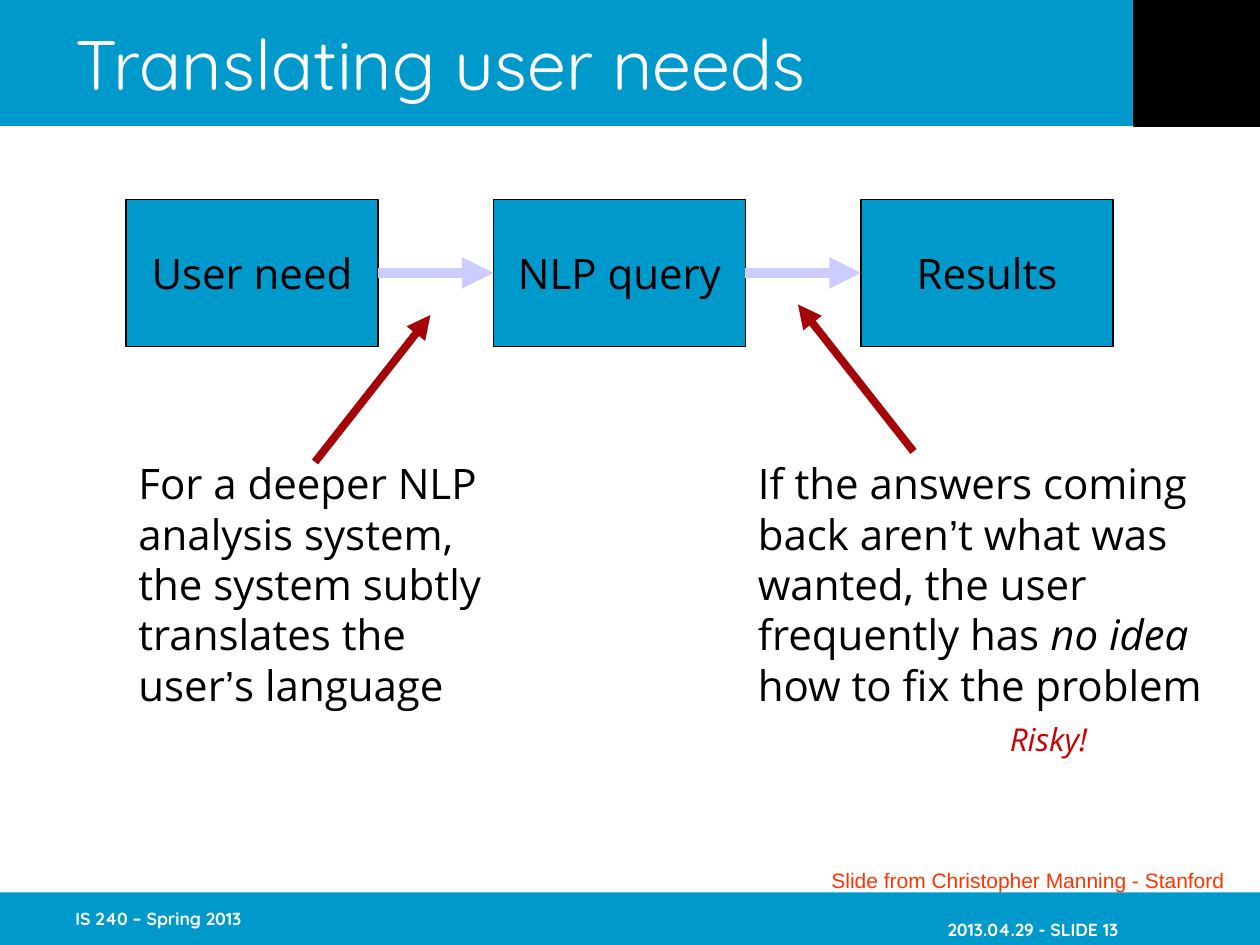
from lxml import etree
from pptx import Presentation
from pptx.dml.color import RGBColor
from pptx.enum.shapes import MSO_CONNECTOR, MSO_SHAPE
from pptx.enum.text import MSO_ANCHOR, PP_ALIGN
from pptx.oxml.ns import qn
from pptx.util import Pt

LEFT, MID, RIGHT = PP_ALIGN.LEFT, PP_ALIGN.CENTER, PP_ALIGN.RIGHT
TOP, CENTER = MSO_ANCHOR.TOP, MSO_ANCHOR.MIDDLE
RECT, LINE = MSO_SHAPE.RECTANGLE, MSO_CONNECTOR.STRAIGHT

COLORS = {"blue": "0099CC", "black": "000000", "white": "FFFFFF",
          "pale": "CCCCFF", "dark": "A40508", "red": "CC0000",
          "orange": "FF3300"}
HEAD, BODY, PLAIN = "Quicksand", "Open Sans", "Arial"

TITLE = "Translating user needs"
STEPS = ["User need", "NLP query", "Results"]
# A paragraph is a string or a list of (text, changes) runs.
CAUSE = ["For a deeper NLP", "analysis system,", "the system subtly",
         "translates the",
         [("user", {}), ("’", {"font": PLAIN}), ("s language", {})]]
EFFECT = ["If the answers coming",
          [("back aren", {}), ("’", {"font": PLAIN}), ("t what was", {})],
          "wanted, the user",
          [("frequently has ", {}), ("no idea", {"italic": True})],
          "how to fix the problem",
          [("Risky!", {"size": 18, "color": "red", "italic": True})]]
BANDS = [(0, 0, 720, 72, "blue", None),
         (0, 510, 720, 30, "blue", None),
         (648, 0, 72, 72, "black", "black")]
HINTS = [((180, 264), (246, 180)), ((522, 258), (456, 174))]

STEP_X, STEP_Y, STEP_W, STEP_H, PITCH = 72, 114, 144, 84, 210


def paint(color):
    return RGBColor.from_string(COLORS[color])


def write(shape, paras, font=BODY, size=24, color="black", bold=False,
          italic=False, align=LEFT, anchor=TOP, inset=7.2, wrap=True):
    frame = shape.text_frame
    frame.word_wrap = wrap
    frame.vertical_anchor = anchor
    frame.margin_left = frame.margin_right = Pt(inset)
    frame.margin_top = frame.margin_bottom = Pt(3.6)
    base = dict(font=font, size=size, color=color, italic=italic)
    for i, runs in enumerate(paras):
        para = frame.add_paragraph() if i else frame.paragraphs[0]
        para.alignment = align
        for text, change in [(runs, {})] if isinstance(runs, str) else runs:
            look = {**base, **change}
            run = para.add_run()
            run.text = text
            run.font.name = look["font"]
            run.font.size = Pt(look["size"])
            run.font.color.rgb = paint(look["color"])
            run.font.italic = look["italic"]
            run.font.bold = bold
    return frame


def add_box(slide, x, y, w, h, fill, line):
    box = slide.shapes.add_shape(RECT, Pt(x), Pt(y), Pt(w), Pt(h))
    box.shadow.inherit = False
    box.fill.solid()
    box.fill.fore_color.rgb = paint(fill)
    if line:
        box.line.color.rgb = paint(line)
        box.line.width = Pt(0.75)
    else:
        box.line.fill.background()
    return box


def add_text(slide, x, y, w, h, paras, **look):
    box = slide.shapes.add_textbox(Pt(x), Pt(y), Pt(w), Pt(h))
    return write(box, paras, **look)


def add_arrow(slide, start, end, color, width):
    arrow = slide.shapes.add_connector(LINE, *map(Pt, start + end))
    arrow.line.color.rgb = paint(color)
    arrow.line.width = Pt(width)
    etree.SubElement(arrow.line._get_or_add_ln(), qn("a:tailEnd"),
                     type="triangle")
    etree.SubElement(arrow._element.spPr, qn("a:effectLst"))


def main():
    deck = Presentation()
    deck.slide_width, deck.slide_height = Pt(720), Pt(540)
    slide = deck.slides.add_slide(deck.slide_layouts[5])

    for band in BANDS:
        add_box(slide, *band)

    title = slide.shapes.title
    title.left, title.top, title.width, title.height = map(
        Pt, (36, 0, 612, 72))
    write(title, [TITLE], font=HEAD, size=40, color="white", anchor=CENTER)
    # Bring the title in front of the band behind it.
    slide.shapes._spTree.append(title._element)

    for i, step in enumerate(STEPS):
        x = STEP_X + i * PITCH
        box = add_box(slide, x, STEP_Y, STEP_W, STEP_H, "blue", "black")
        write(box, [step], align=MID, anchor=CENTER)
        if i:
            y = STEP_Y + STEP_H / 2
            add_arrow(slide, (x - PITCH + STEP_W, y), (x, y), "pale", 6)
    for start, end in HINTS:
        add_arrow(slide, start, end, "dark", 4.5)

    add_text(slide, 72, 258, 220, 151, CAUSE)
    risk = add_text(slide, 426, 258, 282, 180, EFFECT).paragraphs[-1]
    risk.space_before = Pt(6)
    risk._p.get_or_add_pPr().set("marL", str(Pt(144)))

    add_text(slide, 468, 492, 239, 22,
             ["Slide from Christopher Manning - Stanford"], font=PLAIN,
             size=12, color="orange", align=MID, inset=0, wrap=False)
    foot = dict(font=HEAD, size=10, color="white", bold=True, anchor=CENTER)
    add_text(slide, 36, 510, 150, 30, ["IS 240 – Spring 2013"], **foot)
    add_text(slide, 496, 516, 150, 30, ["2013.04.29 - SLIDE 13"],
             align=RIGHT, **foot)
    deck.save("out.pptx")


if __name__ == "__main__":
    main()
